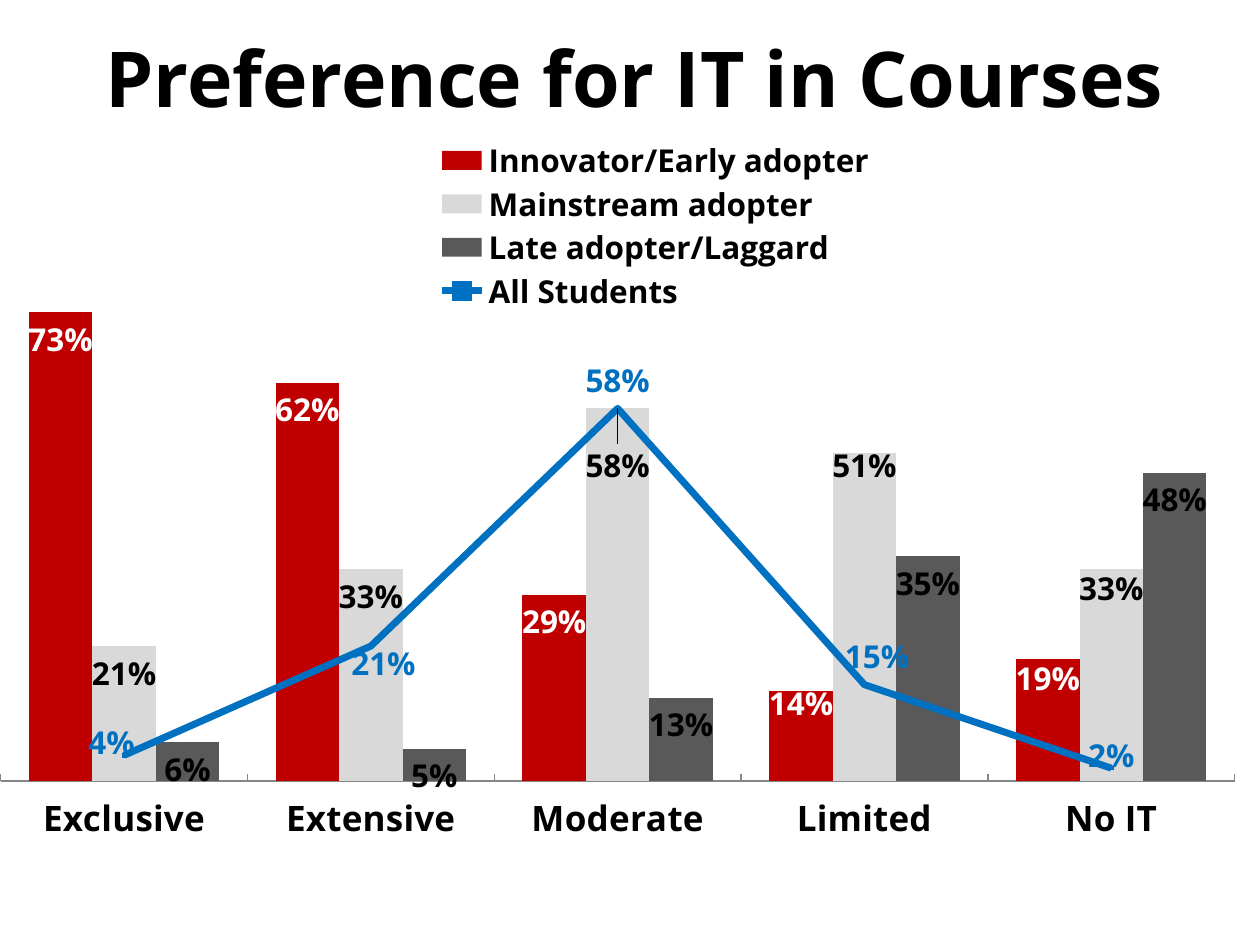
from lxml.etree import SubElement
from pptx import Presentation
from pptx.chart.data import CategoryChartData
from pptx.dml.color import RGBColor
from pptx.enum.chart import XL_CHART_TYPE as ChartType
from pptx.enum.chart import XL_LABEL_POSITION as LabelPosition
from pptx.enum.chart import XL_LEGEND_POSITION as LegendPosition
from pptx.enum.chart import XL_MARKER_STYLE as MarkerStyle
from pptx.enum.chart import XL_TICK_LABEL_POSITION as TickLabelPosition
from pptx.enum.chart import XL_TICK_MARK as TickMark
from pptx.enum.text import MSO_ANCHOR, PP_ALIGN
from pptx.oxml import parse_xml
from pptx.oxml.ns import nsdecls, qn
from pptx.util import Inches, Pt

FONT = "Open Sans"
BLACK = RGBColor(0x00, 0x00, 0x00)
WHITE = RGBColor(0xFF, 0xFF, 0xFF)
RED = RGBColor(0xC0, 0x00, 0x00)
LIGHT_GRAY = RGBColor(0xD9, 0xD9, 0xD9)
DARK_GRAY = RGBColor(0x59, 0x59, 0x59)
AXIS_GRAY = RGBColor(0x86, 0x86, 0x86)
BLUE = RGBColor(0x00, 0x70, 0xC0)
MARKER_BLUE = RGBColor(0x4F, 0x81, 0xBD)

# Content
TITLE = "Preference for IT in Courses"
CATEGORIES = ["Exclusive", "Extensive", "Moderate", "Limited", "No IT"]
# name, values, fill, label colour, label shifts by point (fractions of the chart)
SERIES = [
    ("Innovator/Early adopter", (0.73, 0.62, 0.29, 0.14, 0.19), RED, WHITE,
     {3: (0, -0.02), 4: (0, -0.01)}),
    ("Mainstream adopter", (0.21, 0.33, 0.58, 0.51, 0.33), LIGHT_GRAY, BLACK,
     {2: (0, 0.04), 3: (0, -0.02), 4: (0, -0.01)}),
    ("Late adopter/Laggard", (0.06, 0.05, 0.13, 0.35, 0.48), DARK_GRAY, BLACK, {}),
    ("All Students", (0.04, 0.21, 0.58, 0.15, 0.02), BLUE, BLUE,
     {0: (-0.01, 0.02), 1: (0.01, 0.06), 3: (0.01, 0), 4: (0, 0.02)}),
]


def set_font(font, size, color=BLACK):
    font.name, font.size, font.bold = FONT, Pt(size), True
    font.color.rgb = color


def make_layout(x, y, width=None, height=None, inner=False):
    """Return a c:layout element for a manual position."""
    layout = parse_xml(f"<c:layout {nsdecls('c')}/>")
    manual = SubElement(layout, qn("c:manualLayout"))
    settings = [("x", x), ("y", y)]
    if width is not None:
        settings = [("xMode", "edge"), ("yMode", "edge"), *settings,
                    ("w", width), ("h", height)]
    if inner:
        settings.insert(0, ("layoutTarget", "inner"))
    for tag, value in settings:
        SubElement(manual, qn(f"c:{tag}")).set("val", str(value))
    return layout


def remove_children(element, tag):
    for child in element.findall(qn(tag)):
        element.remove(child)


def move_last_series_to_line(chart):
    """Draw the last column series as a line on the same axes."""
    bar_chart = chart.plots[0]._element
    line_chart = parse_xml(
        f"<c:lineChart {nsdecls('c')}><c:grouping val='standard'/>"
        "<c:varyColors val='0'/></c:lineChart>")
    series = bar_chart.findall(qn("c:ser"))[-1]
    remove_children(series, "c:invertIfNegative")
    line_chart.append(series)
    SubElement(line_chart, qn("c:marker")).set("val", "1")
    for axis_id in bar_chart.findall(qn("c:axId")):
        SubElement(line_chart, qn("c:axId")).set("val", axis_id.get("val"))
    bar_chart.addnext(line_chart)


def add_labels(series, color, position, shifts):
    labels = series.data_labels
    labels.show_value = True
    labels.number_format, labels.number_format_is_linked = "0%", False
    labels.position = position
    set_font(labels.font, 18, color)
    for index, shift in shifts.items():
        label = series.points[index].data_label
        label.position = position
        set_font(label.font, 18, color)
        element = series._element.xpath(f"c:dLbls/c:dLbl[c:idx/@val='{index}']")[0]
        element.find(qn("c:idx")).addnext(make_layout(*shift))


presentation = Presentation()
presentation.slide_width, presentation.slide_height = Inches(10), Inches(7.5)
slide = presentation.slides.add_slide(presentation.slide_layouts[5])

# Title
title = slide.shapes.title
title.left, title.top = Inches(0.25), Inches(0.17)
title.width, title.height = Inches(9.58), Inches(0.87)
title.text_frame.text = TITLE
title.text_frame.vertical_anchor = MSO_ANCHOR.MIDDLE
paragraph = title.text_frame.paragraphs[0]
paragraph.alignment = PP_ALIGN.CENTER
set_font(paragraph.font, 44)

# Chart
chart_data = CategoryChartData(number_format="0%")
chart_data.categories = CATEGORIES
for name, values, *_ in SERIES:
    chart_data.add_series(name, values)
chart = slide.shapes.add_chart(
    ChartType.COLUMN_CLUSTERED, Inches(0), Inches(0.92), Inches(10), Inches(6),
    chart_data).chart
chart.has_title = False
set_font(chart.font, 18)
move_last_series_to_line(chart)
columns, line = chart.plots
columns.gap_width, columns.overlap = 89, 0
columns.vary_by_categories = False

# Axes and plot area
category_axis, value_axis = chart.category_axis, chart.value_axis
category_axis.major_tick_mark = TickMark.INSIDE
category_axis.tick_label_position = TickLabelPosition.LOW
category_axis.format.line.color.rgb = AXIS_GRAY
set_font(category_axis.tick_labels.font, 20)
value_axis.minimum_scale, value_axis.maximum_scale = 0, 1
value_axis.major_unit = 0.1
value_axis.tick_labels.number_format = "0%"
value_axis.tick_labels.number_format_is_linked = False
value_axis.has_major_gridlines = False
value_axis.visible = False
plot_area = columns._element.getparent()
remove_children(plot_area, "c:layout")
plot_area.insert(0, make_layout(0, 0.03, 0.98, 0.85, inner=True))

# Legend
chart.has_legend = True
legend = chart.legend
legend.position = LegendPosition.BOTTOM
legend.include_in_layout = False
set_font(legend.font, 18)
remove_children(legend._element, "c:layout")
legend._element.find(qn("c:legendPos")).addnext(make_layout(0.34, 0.03, 0.36, 0.23))

# Columns
for series, (_, _, fill, label_color, shifts) in zip(columns.series, SERIES):
    series.format.fill.solid()
    series.format.fill.fore_color.rgb = fill
    add_labels(series, label_color, LabelPosition.INSIDE_END, shifts)

# Line
students = line.series[0]
_, _, line_color, label_color, shifts = SERIES[-1]
students.smooth = False
students.format.line.color.rgb = line_color
students.format.line.width = Pt(4)
students.marker.style, students.marker.size = MarkerStyle.SQUARE, 2
students.marker.format.fill.solid()
students.marker.format.fill.fore_color.rgb = MARKER_BLUE
students.marker.format.line.color.rgb = line_color
add_labels(students, label_color, LabelPosition.ABOVE, shifts)

presentation.save("out.pptx")
